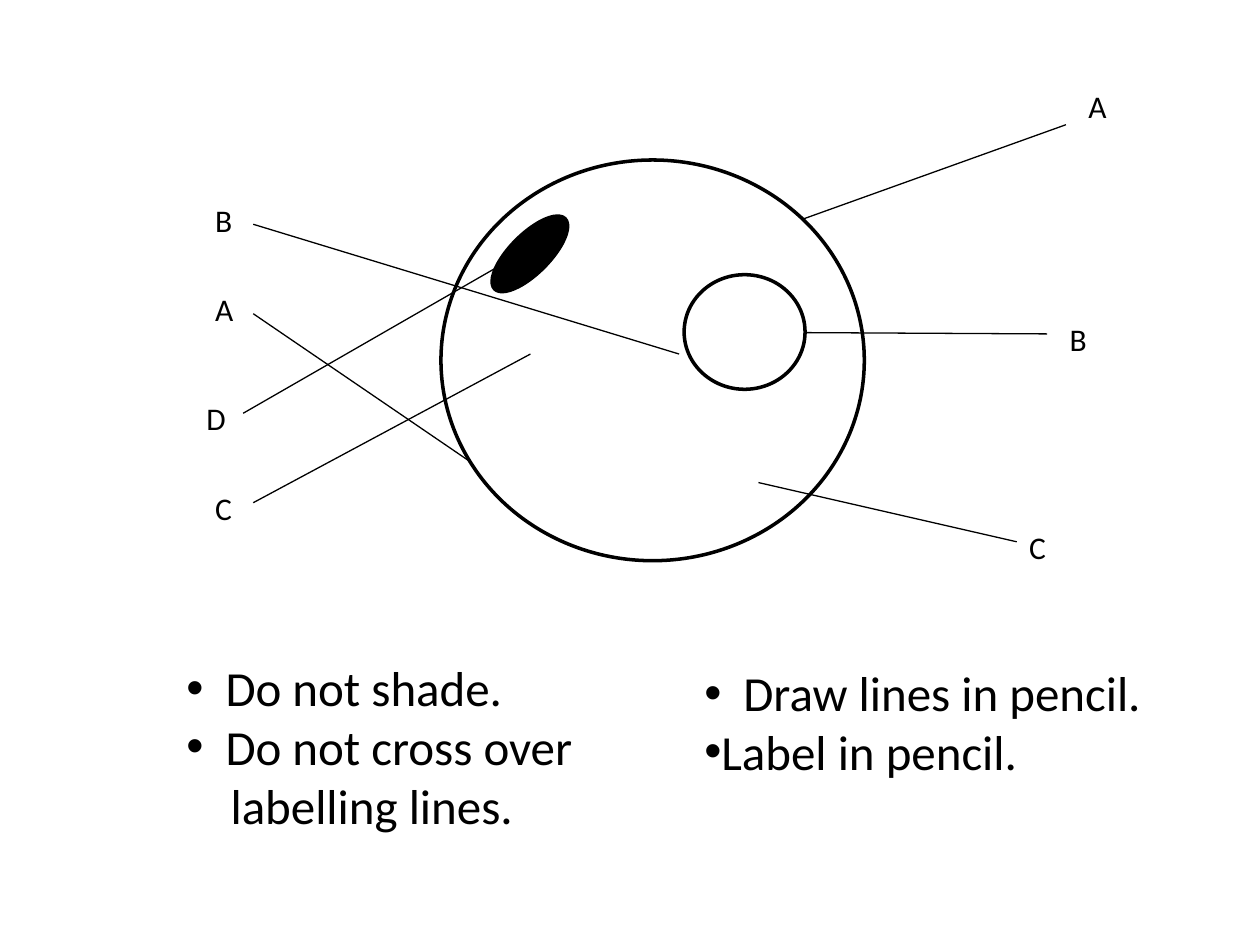
from typing import NamedTuple

from lxml import etree
from pptx import Presentation
from pptx import util as u
from pptx.dml.color import RGBColor
from pptx.enum import shapes, text
from pptx.oxml.ns import qn

EMU_PER_PX = 9144  # 100 px to the inch
BLACK = "000000"
FONT = "Calibri"


class Oval(NamedTuple):
    left: int
    top: int
    width: int
    height: int
    rotation: int = 0
    fill: str | None = None


class Pointer(NamedTuple):
    start_x: int
    start_y: int
    end_x: int
    end_y: int


class Label(NamedTuple):
    letter: str
    left: int
    top: int
    width: int = 35


class Item(NamedTuple):
    words: str
    margin: int = 31
    bullet: bool = True


class RuleList(NamedTuple):
    placeholder: int
    left: int
    top: int
    width: int
    height: int
    items: list[Item]


OVALS = [
    Oval(350, 127, 336, 318),
    Oval(543, 218, 96, 91),
    Oval(405, 162, 31, 79, rotation=45, fill=BLACK),
]
POINTERS = [
    Pointer(421, 281, 201, 399),
    Pointer(374, 367, 201, 249),
    Pointer(393, 213, 193, 328),
    Pointer(539, 281, 201, 178),
    Pointer(637, 174, 846, 99),
    Pointer(602, 383, 807, 430),
    Pointer(639, 264, 831, 265),
]
LABELS = [
    Label("B", 161, 155),
    Label("A", 161, 225),
    Label("D", 154, 312),
    Label("C", 161, 383),
    Label("A", 854, 64, 39),
    Label("B", 839, 249),
    Label("C", 807, 414),
]
RULE_LISTS = [
    RuleList(1, 138, 517, 339, 151, [
        Item("Do not shade."),
        Item("Do not cross over"),
        Item("labelling lines.", margin=35, bullet=False),
    ]),
    RuleList(2, 549, 521, 371, 104, [
        Item("Draw lines in pencil."),
        Item("Label in pencil.", margin=13),
    ]),
]


def px(length: int) -> u.Emu:
    return u.Emu(length * EMU_PER_PX)


def colour(value: str) -> RGBColor:
    return RGBColor.from_string(value)


def format_runs(paragraph, size: int) -> None:
    for run in paragraph.runs:
        run.font.name = FONT
        run.font.size = u.Pt(size)
        run.font.color.rgb = colour(BLACK)


def draw_oval(slide, oval: Oval) -> None:
    shape = slide.shapes.add_shape(
        shapes.MSO_SHAPE.OVAL,
        px(oval.left), px(oval.top), px(oval.width), px(oval.height))
    shape.shadow.inherit = False
    shape.rotation = oval.rotation
    shape.line.color.rgb = colour(BLACK)
    shape.line.width = u.Pt(2)
    if oval.fill:
        shape.fill.solid()
        shape.fill.fore_color.rgb = colour(oval.fill)
    else:
        shape.fill.background()


def draw_pointer(slide, pointer: Pointer) -> None:
    connector = slide.shapes.add_connector(
        shapes.MSO_CONNECTOR.STRAIGHT, *(px(value) for value in pointer))
    connector.line.color.rgb = colour(BLACK)
    connector.line.width = u.Pt(0.75)
    etree.SubElement(connector._element.spPr, qn("a:effectLst"))


def draw_label(slide, label: Label) -> None:
    box = slide.shapes.add_textbox(
        px(label.left), px(label.top), px(label.width), px(40))
    box.text_frame.word_wrap = False
    box.text_frame.text = label.letter
    format_runs(box.text_frame.paragraphs[0], 18)


def set_bullet(paragraph, item: Item) -> None:
    """Hang the text at the item's margin, with or without a bullet."""
    properties = paragraph._p.get_or_add_pPr()
    margin = px(item.margin)
    properties.set("marL", str(margin))
    properties.set("indent", str(-margin if item.bullet else 0))
    if item.bullet:
        etree.SubElement(properties, qn("a:buFont"), typeface="Arial")
        etree.SubElement(properties, qn("a:buChar"), char="•")
    else:
        etree.SubElement(properties, qn("a:buNone"))


def fill_rule_list(slide, rules: RuleList) -> None:
    body = slide.placeholders[rules.placeholder]
    body.left, body.top = px(rules.left), px(rules.top)
    body.width, body.height = px(rules.width), px(rules.height)
    frame = body.text_frame
    frame.word_wrap = True
    frame.auto_size = text.MSO_AUTO_SIZE.NONE
    frame.text = "\n".join(item.words for item in rules.items)
    for paragraph, item in zip(frame.paragraphs, rules.items):
        set_bullet(paragraph, item)
        paragraph.space_before = u.Pt(0)
        format_runs(paragraph, 28)


def main() -> None:
    presentation = Presentation()
    presentation.slide_width, presentation.slide_height = px(1000), px(750)
    two_content = presentation.slide_layouts[3]
    slide = presentation.slides.add_slide(two_content)
    title = slide.shapes.title._element
    title.getparent().remove(title)

    for oval in OVALS:
        draw_oval(slide, oval)
    for pointer in POINTERS:
        draw_pointer(slide, pointer)
    for label in LABELS:
        draw_label(slide, label)
    for rules in RULE_LISTS:
        fill_rule_list(slide, rules)
    presentation.save("out.pptx")


if __name__ == "__main__":
    main()
